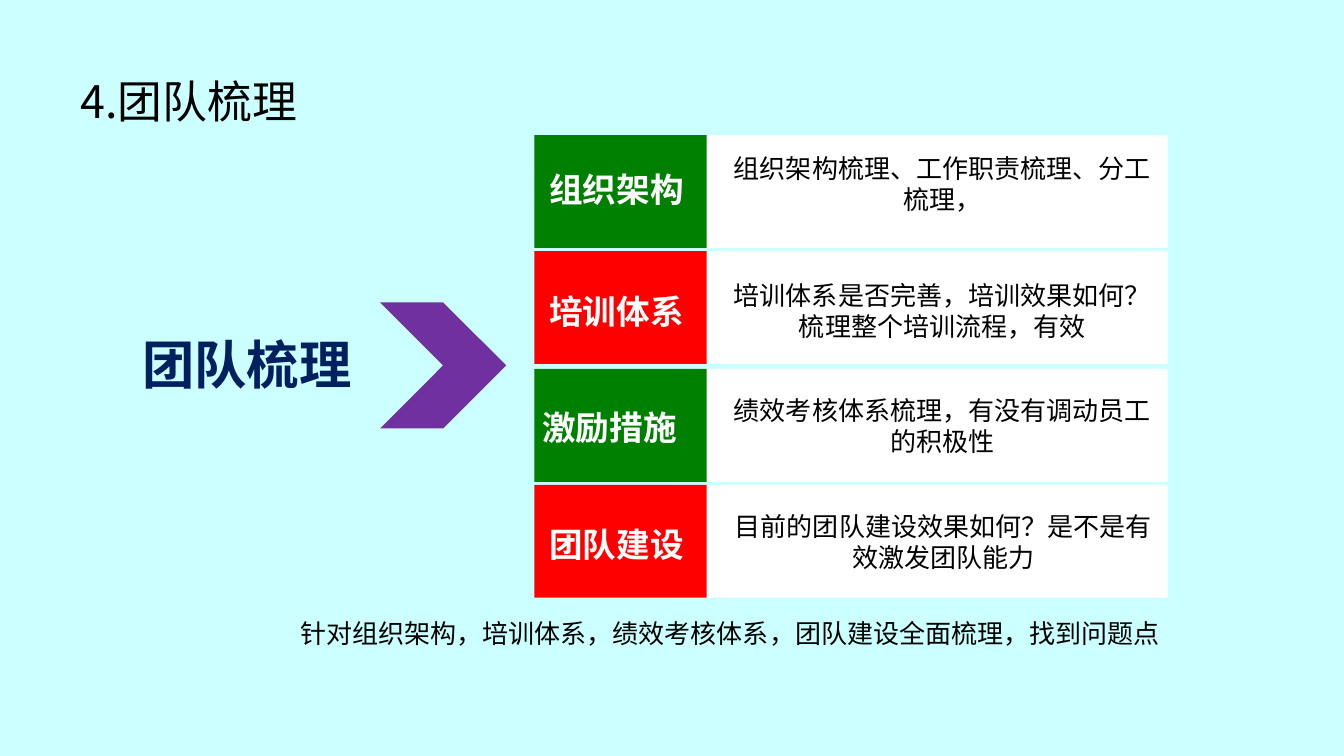
from lxml import etree
from pptx import Presentation
from pptx.dml.color import RGBColor
from pptx.enum import shapes, text
from pptx.oxml.ns import qn
from pptx.util import Inches, Pt

SKY = RGBColor(0xCC, 0xFF, 0xFF)
WHITE = RGBColor(0xFF, 0xFF, 0xFF)
BLACK = RGBColor(0, 0, 0)
GREEN = RGBColor(0, 0x80, 0)
RED = RGBColor(0xFF, 0, 0)
NAVY = RGBColor(0, 0x20, 0x60)
PURPLE = RGBColor(0x70, 0x30, 0xA0)
FONT = "Noto Sans CJK SC"
CENTER = text.PP_ALIGN.CENTER
LEFT = text.PP_ALIGN.LEFT

# top of band, label left and top, body left and top, label, body paragraphs, label fill
ROWS = [
    (1.34, 5.34, 1.6, 7.12, 1.44, "组织架构", ["组织架构梳理、工作职责梳理、分工梳理，"], GREEN),
    (2.49, 5.34, 2.81, 7.12, 2.7, "培训体系",
     ["培训体系是否完善，培训效果如何？", "梳理整个培训流程，有效"], RED),
    (3.66, 5.27, 3.96, 7.12, 3.84, "激励措施", ["绩效考核体系梳理，有没有调动员工的积极性"], GREEN),
    (4.81, 5.34, 5.12, 7.13, 4.99, "团队建设", ["目前的团队建设效果如何？是不是有效激发团队能力"], RED),
]


class SlideBuilder:
    def __init__(self, prs):
        self.s = prs.slides.add_slide(prs.slide_layouts[6])
        fill = self.s.background.fill
        fill.solid()
        fill.fore_color.rgb = SKY

    def block(self, kind, x, y, w, h, color):
        sp = self.s.shapes.add_shape(kind, Inches(x), Inches(y), Inches(w), Inches(h))
        sp.shadow.inherit = False
        sp.fill.solid()
        sp.fill.fore_color.rgb = color
        sp.line.fill.background()
        return sp

    def label(self, x, y, w, h, lines, size, color=BLACK, bold=False, align=CENTER,
              wrap=False, font=FONT, anchor=text.MSO_ANCHOR.TOP):
        """Add a text box with a line pitch of 1.2 times the font size."""
        sp = self.s.shapes.add_textbox(Inches(x), Inches(y), Inches(w), Inches(h))
        tf = sp.text_frame
        tf.word_wrap = wrap
        tf.vertical_anchor = anchor
        # Tall CJK descenders raise the glyphs; move them back down.
        shift = 0.08 * size / 72
        tf.margin_top, tf.margin_bottom = Inches(0.05 + shift), Inches(0.05 - shift)
        for i, line in enumerate(lines):
            p = tf.paragraphs[0] if i == 0 else tf.add_paragraph()
            p.alignment = align
            p.line_spacing = Pt(1.2 * size)
            r = p.add_run()
            r.text = line
            r.font.name, r.font.size, r.font.bold = font, Pt(size), bold
            r.font.color.rgb = color
            etree.SubElement(r.font._element, qn("a:ea"), typeface=FONT)
        return sp


def main():
    prs = Presentation()
    prs.slide_width, prs.slide_height = Inches(13.33), Inches(7.5)
    b = SlideBuilder(prs)
    rect = shapes.MSO_SHAPE.RECTANGLE

    for top, label_x, label_y, body_x, body_y, name, body, color in ROWS:
        b.block(rect, 6.67, top, 4.91, 1.12, WHITE)
        b.block(rect, 5.3, top, 1.71, 1.12, color)
        b.label(label_x, label_y, 1.55, 0.5, [name], 24, WHITE, bold=True)
        b.label(body_x, body_y, 4.45, 0.73, body, 18.6, wrap=True)

    b.label(1.26, 3.2, 2.38, 0.73, ["团队梳理"], 37.4, NAVY, bold=True)
    b.block(shapes.MSO_SHAPE.CHEVRON, 3.77, 3, 1.25, 1.25, PURPLE)
    b.label(2.88, 6.06, 8.82, 0.42,
            ["针对组织架构，培训体系，绩效考核体系，团队建设全面梳理，找到问题点"],
            18.6, align=LEFT, font="Arial")
    b.label(0.7, 0.43, 11.03, 1.06, ["4.团队梳理"], 32, align=LEFT, wrap=True,
            anchor=text.MSO_ANCHOR.MIDDLE)
    prs.save("out.pptx")


if __name__ == "__main__":
    main()
